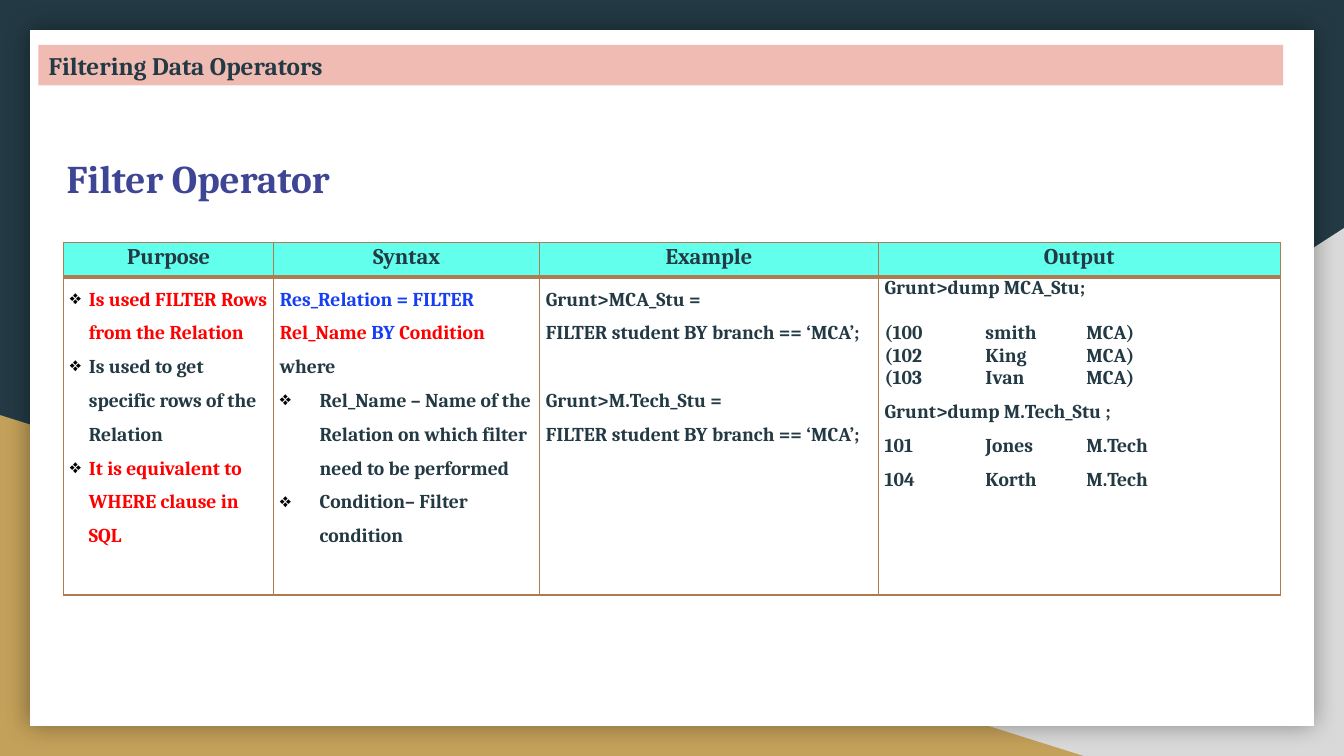
from lxml.etree import SubElement
from pptx import Presentation
from pptx.dml.color import RGBColor
from pptx.enum.shapes import MSO_SHAPE
from pptx.enum.text import MSO_ANCHOR, MSO_AUTO_SIZE, PP_ALIGN
from pptx.oxml.ns import qn
from pptx.util import Pt

WIDE, HIGH = 960, 540
INK, RED, BLUE, WHITE = "233A44", "FF0000", "163EF5", "FFFFFF"
GOLD, GREY, ROSE, AQUA = "C4A15A", "D9D9D9", "F0BBB2", "63FFED"
BROWN, NAVY = "AF7B51", "3D4594"

HEADS = ["Purpose", "Syntax", "Example", "Output"]
COLS = [150, 190, 242, 287]

# Each paragraph: its runs as (text, colour), then its format
PURPOSE = [
    ([("Is used FILTER Rows from the Relation", RED)], {"hang": 13.5}),
    ([("Is used to get specific rows of the Relation", INK)], {"hang": 13.5}),
    ([("It is equivalent to WHERE clause in SQL", RED)], {"hang": 13.5}),
]
SYNTAX = [
    ([("Res_Relation = FILTER ", BLUE), ("Rel_Name ", RED),
      ("BY ", BLUE), ("Condition", RED)], {}),
    ([("where", INK)], {}),
    ([("Rel_Name – Name of the Relation on which filter need to be performed",
       INK)], {"hang": 28.35}),
    ([("Condition– Filter condition", INK)], {"hang": 28.35}),
]
EXAMPLE = [
    ([("Grunt>MCA_Stu =", INK)], {}),
    ([("FILTER student BY branch == ‘MCA’;", INK)], {}),
    ([("Grunt>M.Tech_Stu =", INK)], {"before": 24}),
    ([("FILTER student BY branch == ‘MCA’;", INK)], {}),
]
TABS = (72, 144)
OUTPUT = [
    ([("Grunt>dump MCA_Stu;", INK)], {"line": 1}),
    ([("(100\tsmith\tMCA)", INK)], {"line": 1, "before": 16, "tabs": TABS}),
    ([("(102\tKing\tMCA)", INK)], {"line": 1, "tabs": TABS}),
    ([("(103\tIvan\tMCA)", INK)], {"line": 1, "tabs": TABS}),
    ([("Grunt>dump M.Tech_Stu ;", INK)], {"after": 8}),
    ([("101\tJones\tM.Tech", INK)], {"line": 1, "after": 8, "tabs": TABS}),
    ([("104\tKorth\tM.Tech", INK)], {"line": 1, "after": 8, "tabs": TABS}),
]


def paint(color, code):
    color.rgb = RGBColor.from_string(code)


def fill(part, code):
    part.fill.solid()
    paint(part.fill.fore_color, code)


def style(run, size, code):
    font = run.font
    font.name, font.size, font.bold = "Cambria", Pt(size), True
    paint(font.color, code)


def solid(parent, code):
    node = SubElement(parent, qn("a:solidFill"))
    return SubElement(node, qn("a:srgbClr"), val=code)


def block(slide, kind, box, code):
    shape = slide.shapes.add_shape(kind, *map(Pt, box))
    shape.shadow.inherit = False
    fill(shape, code)
    shape.line.fill.background()
    return shape


def backdrop(slide, box):
    left, top, wide, high = box
    fill(slide.background, INK)
    # Corner triangles
    grey = block(slide, MSO_SHAPE.RIGHT_TRIANGLE,
                 (left + wide - 584, top + high - 377, 584, 377), GREY)
    grey.element.spPr.find(qn("a:xfrm")).set("flipH", "1")
    block(slide, MSO_SHAPE.RIGHT_TRIANGLE,
          (left, top + high - 243.5, 774, 243.5), GOLD)
    # White card with a soft shadow
    card = block(slide, MSO_SHAPE.RECTANGLE,
                 (left + 21.5, top + 21.5, wide - 43, high - 43), WHITE)
    effects = card.element.spPr.find(qn("a:effectLst"))
    glow = SubElement(effects, qn("a:outerShdw"), blurRad=str(Pt(18)),
                      dist="0", dir="0", algn="ctr", rotWithShape="0")
    SubElement(solid_color(glow, "000000"), qn("a:alpha"), val="40000")


def solid_color(parent, code):
    return SubElement(parent, qn("a:srgbClr"), val=code)


def place(shape, box):
    shape.left, shape.top, shape.width, shape.height = map(Pt, box)


def banner(slide, box):
    title = slide.shapes.title
    slide.shapes.element.append(title.element)  # in front of the card
    place(title, box)
    fill(title, ROSE)
    frame = title.text_frame
    frame.text = "Filtering Data Operators"
    frame.auto_size = MSO_AUTO_SIZE.NONE
    frame.vertical_anchor = MSO_ANCHOR.MIDDLE
    para = frame.paragraphs[0]
    para.alignment = PP_ALIGN.LEFT
    style(para.runs[0], 18, INK)


def heading(slide, box):
    frame = slide.shapes.add_textbox(*map(Pt, box)).text_frame
    frame.text = "Filter Operator"
    frame.word_wrap = False
    para = frame.paragraphs[0]
    para.alignment = PP_ALIGN.CENTER
    run = para.runs[0]
    style(run, 28, NAVY)
    # Thin outline around the letters
    run.font.fill.solid()
    paint(run.font.fill.fore_color, NAVY)
    props = run.font._element
    line = SubElement(props, qn("a:ln"), w=str(Pt(0.75)))
    solid(line, BROWN)
    props.insert(0, line)


def border(cell, top, bottom):
    props = cell._tc.get_or_add_tcPr()
    for side, width in zip("LRTB", (1, 1, top, bottom)):
        line = SubElement(props, qn("a:ln" + side), w=str(Pt(width)))
        solid(line, BROWN)


def dress(cell, code, top, bottom):
    border(cell, top, bottom)
    fill(cell, code)
    cell.margin_left = cell.margin_right = Pt(4.5)
    cell.margin_top = cell.margin_bottom = 0


def write(para, runs, line=1.5, before=0, after=0, hang=0, tabs=()):
    para.line_spacing = float(line)
    para.space_before, para.space_after = Pt(before), Pt(after)
    for text, code in runs:
        run = para.add_run()
        run.text = text
        style(run, 14, code)
    props = para._p.get_or_add_pPr()
    if hang:
        props.set("marL", str(Pt(hang)))
        props.set("indent", str(-Pt(hang)))
        solid_color(SubElement(props, qn("a:buClr")), "000000")
        SubElement(props, qn("a:buChar"), char="❖")
    if tabs:
        stops = SubElement(props, qn("a:tabLst"))
        for pos in tabs:
            SubElement(stops, qn("a:tab"), pos=str(Pt(pos)), algn="l")


def grid(slide, box):
    table = slide.shapes.add_table(2, len(COLS), *map(Pt, box)).table
    table.first_row = table.horz_banding = False
    table.rows[0].height = Pt(25)
    table.rows[1].height = Pt(box[3] - 25)
    bodies = [PURPOSE, SYNTAX, EXAMPLE, OUTPUT]
    for i, (head, body) in enumerate(zip(HEADS, bodies)):
        table.columns[i].width = Pt(COLS[i])
        # Header cell
        cell = table.cell(0, i)
        dress(cell, AQUA, 1, 3)
        cell.text_frame.text = head
        para = cell.text_frame.paragraphs[0]
        para.alignment = PP_ALIGN.CENTER
        para.line_spacing, para.space_after = 1.07, Pt(8)
        style(para.runs[0], 16, INK)
        # Body cell
        cell = table.cell(1, i)
        dress(cell, WHITE, 3, 1)
        frame = cell.text_frame
        for j, (runs, form) in enumerate(body):
            para = frame.add_paragraph() if j else frame.paragraphs[0]
            write(para, runs, **form)


def main():
    deck = Presentation()
    deck.slide_width, deck.slide_height = Pt(WIDE), Pt(HIGH)
    slide = deck.slides.add_slide(deck.slide_layouts[5])
    backdrop(slide, (0, 0, WIDE, HIGH))
    banner(slide, (27.5, 32, 889, 29))
    grid(slide, (45.5, 173, sum(COLS), 252))
    heading(slide, (36.5, 106.5, 210, 41))
    deck.save("out.pptx")


if __name__ == "__main__":
    main()
